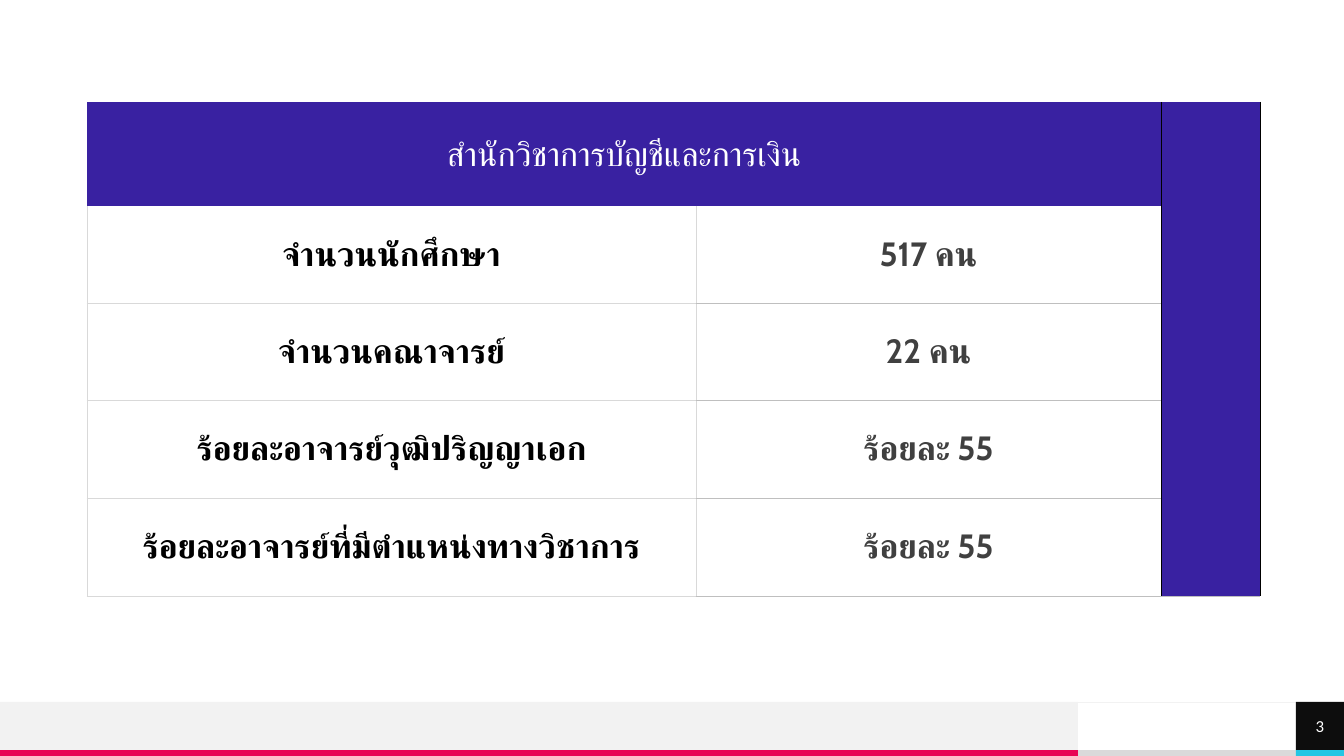
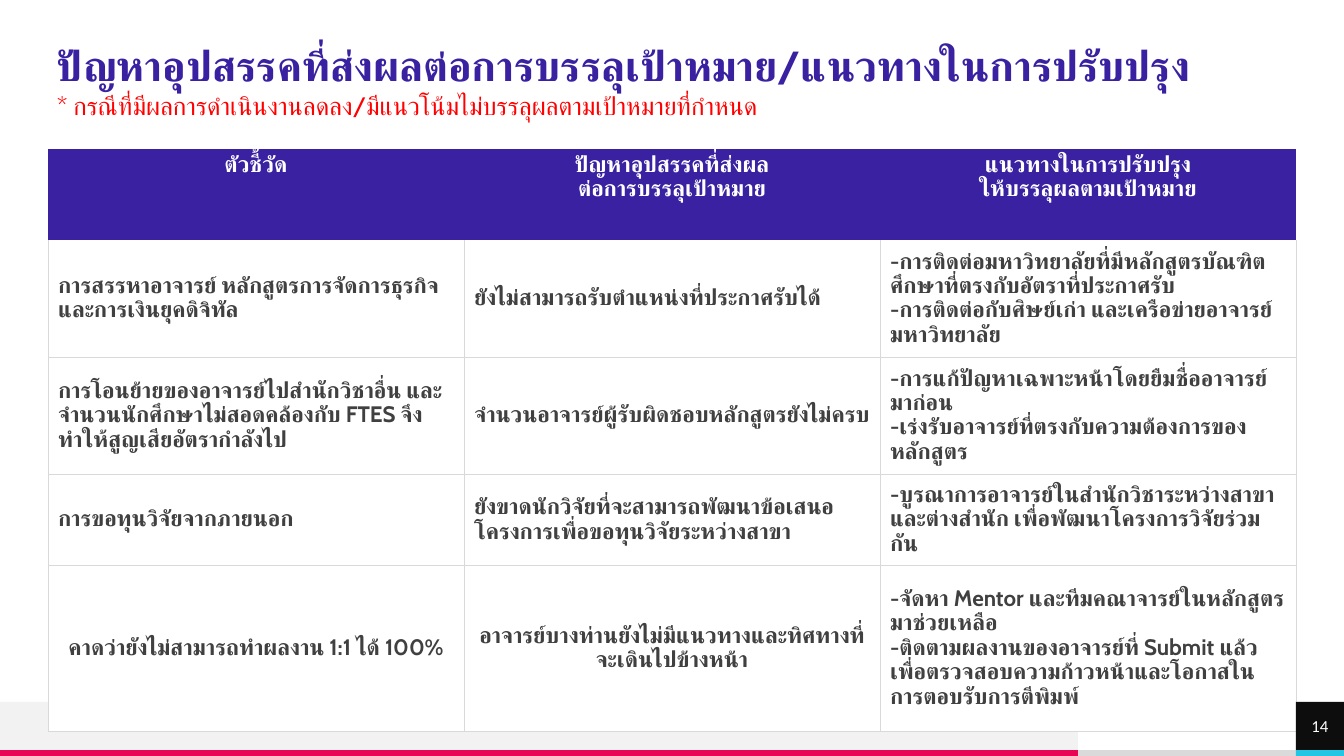
from dataclasses import dataclass

from lxml import etree
from pptx import Presentation
from pptx import util as u
from pptx.dml.color import RGBColor
from pptx.enum import shapes, text
from pptx.oxml import ns

LEFT, CENTER = text.PP_ALIGN.LEFT, text.PP_ALIGN.CENTER
TOP, MIDDLE = text.MSO_ANCHOR.TOP, text.MSO_ANCHOR.MIDDLE
WIDTH, HEIGHT = 1344, 756
SCALE = 12192000 / WIDTH
FOOTER_TOP, STRIP_TOP = 702, 750
BAND_RIGHT, PAGE_LEFT = 1078, 1296
PLAIN_TABLE = "{2D5ABB26-0587-4C30-8999-92F81FD0307C}"


@dataclass(frozen=True)
class Theme:
    body_font: str = "Cabin"
    footer_font: str = "Calibri"
    purple: str = "3921A1"
    pink: str = "E80554"
    cyan: str = "25C6E3"
    red: str = "FF0000"
    white: str = "FFFFFF"
    black: str = "000000"
    ink: str = "404040"
    page: str = "0D0D0D"
    band: str = "F2F2F2"
    strip: str = "DADADA"
    grid: str = "D9D9D9"
    row_line: str = "BFBFBF"
    title: int = 30
    figure: int = 24
    subtitle: int = 18
    cell: int = 16
    small: int = 12
    issue_spacing: float = 0.9
    grid_width: float = 0.5
    thin_width: float = 0.25


T = Theme()

SCHOOL = "สำนักวิชาการบัญชีและการเงิน"
FIGURES = [
    ("จำนวนนักศึกษา", "517 คน"),
    ("จำนวนคณาจารย์", "22 คน"),
    ("ร้อยละอาจารย์วุฒิปริญญาเอก", "ร้อยละ 55"),
    ("ร้อยละอาจารย์ที่มีตำแหน่งทางวิชาการ", "ร้อยละ 55"),
]
TITLE = "ปัญหาอุปสรรคที่ส่งผลต่อการบรรลุเป้าหมาย/แนวทางในการปรับปรุง"
SUBTITLE = "* กรณีที่มีผลการดำเนินงานลดลง/มีแนวโน้มไม่บรรลุผลตามเป้าหมายที่กำหนด"
HEADINGS = [
    ["ตัวชี้วัด"],
    ["ปัญหาอุปสรรคที่ส่งผล", "ต่อการบรรลุเป้าหมาย"],
    ["แนวทางในการปรับปรุง", "ให้บรรลุผลตามเป้าหมาย"],
]
ISSUES = [
    [
        ["การสรรหาอาจารย์ หลักสูตรการจัดการธุรกิจและการเงินยุคดิจิทัล"],
        ["ยังไม่สามารถรับตำแหน่งที่ประกาศรับได้"],
        ["-การติดต่อมหาวิทยาลัยที่มีหลักสูตรบัณฑิตศึกษาที่ตรงกับอัตราที่ประกาศรับ",
         "-การติดต่อกับศิษย์เก่า และเครือข่ายอาจารย์มหาวิทยาลัย"],
    ],
    [
        ["การโอนย้ายของอาจารย์ไปสำนักวิชาอื่น และจำนวนนักศึกษาไม่สอดคล้องกับ FTES "
         "จึงทำให้สูญเสียอัตรากำลังไป"],
        ["จำนวนอาจารย์ผู้รับผิดชอบหลักสูตรยังไม่ครบ"],
        ["-การแก้ปัญหาเฉพาะหน้าโดยยืมชื่ออาจารย์มาก่อน",
         "-เร่งรับอาจารย์ที่ตรงกับความต้องการของหลักสูตร"],
    ],
    [
        ["การขอทุนวิจัยจากภายนอก"],
        ["ยังขาดนักวิจัยที่จะสามารถพัฒนาข้อเสนอโครงการเพื่อขอทุนวิจัยระหว่างสาขา"],
        ["-บูรณาการอาจารย์ในสำนักวิชาระหว่างสาขา และต่างสำนัก "
         "เพื่อพัฒนาโครงการวิจัยร่วมกัน"],
    ],
    [
        ["คาดว่ายังไม่สามารถทำผลงาน 1:1 ได้ 100%"],
        ["อาจารย์บางท่านยังไม่มีแนวทางและทิศทางที่จะเดินไปข้างหน้า"],
        ["-จัดหา Mentor และทีมคณาจารย์ในหลักสูตรมาช่วยเหลือ",
         "-ติดตามผลงานของอาจารย์ที่ Submit แล้ว "
         "เพื่อตรวจสอบความก้าวหน้าและโอกาสในการตอบรับการตีพิมพ์"],
    ],
]
CENTERED_ISSUES = {(1, 1), (3, 0), (3, 1)}


def px(n):
    return u.Emu(round(n * SCALE))


def rgb(color):
    return RGBColor.from_string(color)


def add_run(p, words, size, color, bold=False, font=T.body_font):
    r = p.add_run()
    r.text = words
    r.font.name, r.font.size, r.font.bold = font, u.Pt(size), bold
    r.font.color.rgb = rgb(color)
    etree.SubElement(r.font._element, ns.qn("a:cs"), typeface=font)


def add_paragraphs(tf, lines, size, color, bold=False, align=LEFT, spacing=1.0):
    for i, line in enumerate(lines):
        p = tf.add_paragraph() if i else tf.paragraphs[0]
        p.alignment = align
        p.line_spacing = spacing
        add_run(p, line, size, color, bold)


def set_margins(tf, left, top, right, bottom):
    tf.margin_left, tf.margin_top = px(left), px(top)
    tf.margin_right, tf.margin_bottom = px(right), px(bottom)


def add_rect(s, x, y, w, h, color):
    sp = s.shapes.add_shape(shapes.MSO_SHAPE.RECTANGLE, px(x), px(y), px(w), px(h))
    sp.shadow.inherit = False
    sp.fill.solid()
    sp.fill.fore_color.rgb = rgb(color)
    sp.line.fill.background()
    return sp


def add_rule(s, y, color):
    line = s.shapes.add_connector(
        shapes.MSO_CONNECTOR.STRAIGHT, 0, px(y), px(WIDTH), px(y))
    line.line.color.rgb = rgb(color)
    line.line.width = u.Pt(0.5)
    etree.SubElement(line.element.spPr, ns.qn("a:effectLst"))
    return line


def move_footer_to_master(prs, s):
    strip_height = HEIGHT - STRIP_TOP
    parts = [
        add_rect(s, BAND_RIGHT, STRIP_TOP, PAGE_LEFT - BAND_RIGHT, strip_height, T.strip),
        add_rect(s, 0, FOOTER_TOP, BAND_RIGHT, STRIP_TOP - FOOTER_TOP, T.band),
        add_rect(s, 0, STRIP_TOP, BAND_RIGHT, strip_height, T.pink),
        add_rect(s, PAGE_LEFT, STRIP_TOP, WIDTH - PAGE_LEFT, strip_height, T.cyan),
        add_rule(s, FOOTER_TOP, T.band),
    ]
    for number, part in enumerate(parts, 101):
        part.element.xpath(".//p:cNvPr")[0].set("id", str(number))
        prs.slide_master.shapes.element.append(part.element)


def add_page_number(s, number):
    sp = add_rect(s, PAGE_LEFT, FOOTER_TOP, WIDTH - PAGE_LEFT, STRIP_TOP - FOOTER_TOP, T.page)
    tf = sp.text_frame
    tf.vertical_anchor = MIDDLE
    set_margins(tf, 0, 0, 0, 0)
    p = tf.paragraphs[0]
    p.alignment = CENTER
    add_run(p, str(number), T.small, T.white, font=T.footer_font)


def add_table(s, x, y, widths, heights):
    frame = s.shapes.add_table(
        len(heights), len(widths), px(x), px(y), px(sum(widths)), px(sum(heights)))
    table = frame.table
    table.first_row = table.horz_banding = False
    table._tbl.tblPr.find(ns.qn("a:tableStyleId")).text = PLAIN_TABLE
    for column, width in zip(table.columns, widths):
        column.width = px(width)
    for row, height in zip(table.rows, heights):
        row.height = px(height)
    return table


def style_cell(cell, fill, borders=None):
    props = cell._tc.get_or_add_tcPr()
    for side in "LRTB":
        color, width = (borders or {}).get(side, (None, 0))
        ln = etree.SubElement(props, ns.qn(f"a:ln{side}"), w=str(u.Pt(width)))
        if color:
            paint = etree.SubElement(ln, ns.qn("a:solidFill"))
            etree.SubElement(paint, ns.qn("a:srgbClr"), val=color)
        else:
            etree.SubElement(ln, ns.qn("a:noFill"))
    cell.fill.solid()
    cell.fill.fore_color.rgb = rgb(fill)
    cell.vertical_anchor = MIDDLE


def add_figures(s):
    table = add_table(s, 87, 102, [609, 465, 99], [104] + [97] * 2 + [98] * 2)
    black, grid = (T.black, T.grid_width), (T.grid, T.grid_width)
    thin = (T.row_line, T.thin_width)
    for c in range(2):
        style_cell(table.cell(0, c), T.purple, {"R": black} if c else None)
    for r in range(5):
        style_cell(table.cell(r, 2), T.purple, {"L": black, "R": black, "B": thin})
    table.cell(0, 0).merge(table.cell(0, 1))
    table.cell(0, 2).merge(table.cell(4, 2))
    add_paragraphs(table.cell(0, 0).text_frame, [SCHOOL], T.figure, T.white, align=CENTER)
    for r, row in enumerate(FIGURES, 1):
        for c, (words, color, rule) in enumerate(zip(row, (T.black, T.ink), (grid, thin))):
            cell = table.cell(r, c)
            borders = {"L": grid, "R": black if c else grid, "B": rule}
            if r > 1:
                borders["T"] = rule
            style_cell(cell, T.white, borders)
            add_paragraphs(cell.text_frame, [words], T.figure, color, True, CENTER)


def add_issues(s):
    table = add_table(s, 48, 149, [416] * 3, [91, 117, 117, 91, 166])
    grid = (T.grid, T.grid_width)
    for c, lines in enumerate(HEADINGS):
        cell = table.cell(0, c)
        style_cell(cell, T.purple)
        cell.vertical_anchor = TOP
        cell.margin_top = px(4)
        add_paragraphs(cell.text_frame, lines, T.cell, T.white, True, CENTER, T.issue_spacing)
    for r, row in enumerate(ISSUES):
        for c, lines in enumerate(row):
            cell = table.cell(r + 1, c)
            sides = "LRTB" if r else "LRB"
            style_cell(cell, T.white, dict.fromkeys(sides, grid))
            align = CENTER if (r, c) in CENTERED_ISSUES else LEFT
            add_paragraphs(cell.text_frame, lines, T.cell, T.ink, True, align, T.issue_spacing)


def set_title(s):
    sp = s.shapes.title
    sp.left, sp.top, sp.width, sp.height = px(47), px(35), px(1233), px(95)
    tf = sp.text_frame
    tf.word_wrap = True
    tf.auto_size = text.MSO_AUTO_SIZE.NONE
    tf.vertical_anchor = TOP
    set_margins(tf, 10, 5, 10, 5)
    add_paragraphs(tf, [TITLE], T.title, T.purple, True)
    p = tf.add_paragraph()
    p.alignment = LEFT
    add_run(p, SUBTITLE, T.subtitle, T.red)


def main():
    prs = Presentation()
    prs.slide_width, prs.slide_height = px(WIDTH), px(HEIGHT)
    title_only, blank = prs.slide_layouts[5], prs.slide_layouts[6]

    s = prs.slides.add_slide(blank)
    move_footer_to_master(prs, s)
    add_figures(s)
    add_page_number(s, 3)

    s = prs.slides.add_slide(title_only)
    add_issues(s)
    add_page_number(s, 14)
    set_title(s)

    prs.save("out.pptx")


if __name__ == "__main__":
    main()
